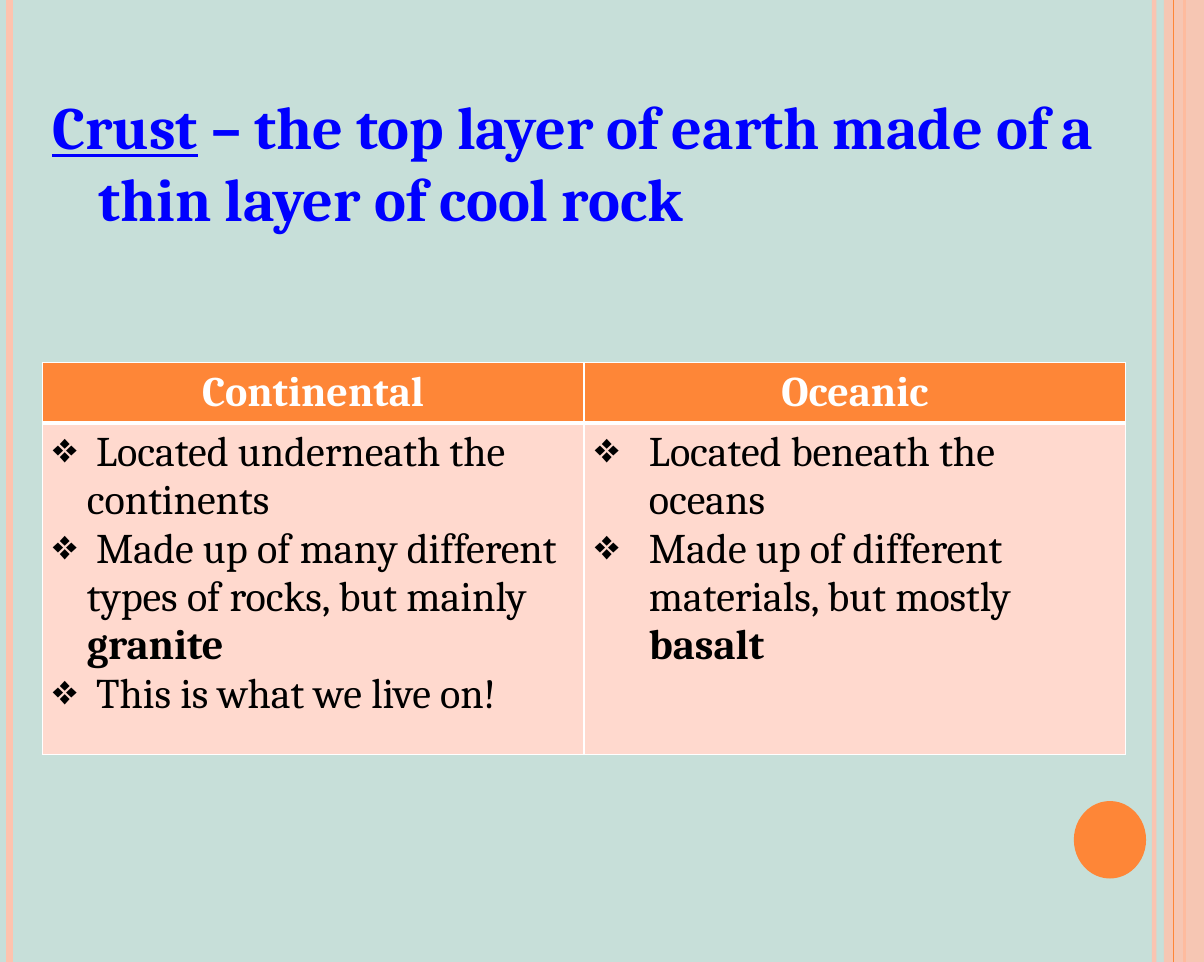
from dataclasses import dataclass

from lxml import etree
from pptx import Presentation
from pptx.dml.color import RGBColor
from pptx.enum.shapes import MSO_CONNECTOR, MSO_SHAPE
from pptx.enum.text import MSO_ANCHOR, MSO_AUTO_SIZE, PP_ALIGN
from pptx.oxml.ns import qn
from pptx.util import Pt

WIDE, HIGH = 800, 639.5
FONT = "Cambria"
HUES = {
    "back": "C7DFD9", "peach": "FEC3AE", "orange": "FE8637", "pale": "FFD9CE",
    "blue": "0000FF", "white": "FFFFFF", "black": "000000",
}


@dataclass
class Stripe:
    x: float
    width: float
    hue: str
    alpha: int = 100


@dataclass
class Block:
    kind: MSO_SHAPE
    box: tuple
    hue: str
    alpha: int = 100


@dataclass
class Run:
    text: str
    bold: bool = False
    under: bool = False


@dataclass
class Column:
    head: str
    indent: float
    items: list


DECOR = [
    Stripe(766.8, 3, "peach", 93),
    Stripe(6.5, 4.5, "peach"),
    Stripe(787, 1.5, "orange"),
    Block(MSO_SHAPE.RECTANGLE, (773.3, 0, 26.7, HIGH), "peach", 87),
    Stripe(779.8, 0.75, "orange"),
    Block(MSO_SHAPE.OVAL, (713.5, 532.5, 48, 51.5), "orange"),
]
TITLE = [
    Run("Crust", True, True),
    Run(" "),
    Run("– the top layer of earth made of a thin layer of cool rock", True),
]
COLUMNS = [
    Column("Continental", 22.5, [
        [Run(" Located underneath the continents")],
        [Run(" Made up of many different types of rocks, but mainly "),
         Run("granite", True)],
        [Run(" This is what we live on!")],
    ]),
    Column("Oceanic", 36, [
        [Run("Located beneath the oceans")],
        [Run("Made up of different materials, but mostly "),
         Run("basalt", True)],
    ]),
]
EDGES = {"lnL": 1, "lnR": 1, "lnT": 1, "lnB": 1}


def tint(fill, hue: str, alpha: int = 100) -> None:
    """Set a solid fill, with optional opacity in percent."""
    fill.solid()
    fill.fore_color.rgb = RGBColor.from_string(HUES[hue])
    if alpha < 100:
        node = fill._xPr.find(qn("a:solidFill"))[0]
        etree.SubElement(node, qn("a:alpha"), val=str(alpha * 1000))


def draw_stripe(slide, part: Stripe) -> None:
    """Draw a full-height vertical line."""
    line = slide.shapes.add_connector(
        MSO_CONNECTOR.STRAIGHT, Pt(part.x), Pt(0), Pt(part.x), Pt(HIGH))
    line.line.width = Pt(part.width)
    tint(line.line.fill, part.hue, part.alpha)
    etree.SubElement(line._element.spPr, qn("a:effectLst"))


def draw_block(slide, part: Block) -> None:
    """Draw a filled shape with no outline."""
    shape = slide.shapes.add_shape(part.kind, *map(Pt, part.box))
    shape.shadow.inherit = False
    shape.line.fill.background()
    tint(shape.fill, part.hue, part.alpha)


def write(para, runs: list, size: float, hue: str) -> None:
    """Add styled runs to a paragraph."""
    for item in runs:
        run = para.add_run()
        run.text = item.text
        font = run.font
        font.name, font.size = FONT, Pt(size)
        font.bold, font.underline = item.bold, item.under
        font.color.rgb = RGBColor.from_string(HUES[hue])


def hang(para, indent: float, mark: str = "") -> None:
    """Give a paragraph a hanging indent and an optional bullet."""
    props = para._p.get_or_add_pPr()
    props.set("marL", str(Pt(indent)))
    props.set("indent", str(-Pt(indent)))
    if mark:
        etree.SubElement(props, qn("a:buChar"), char=mark)


def paint(cell, hue: str, edges: dict) -> None:
    """Set the borders and fill of a cell."""
    props = cell._tc.get_or_add_tcPr()
    for tag, width in edges.items():
        line = etree.SubElement(props, qn(f"a:{tag}"), w=str(Pt(width)))
        fill = etree.SubElement(line, qn("a:solidFill"))
        etree.SubElement(fill, qn("a:srgbClr"), val=HUES["white"])
    tint(cell.fill, hue)


def draw_title(slide) -> None:
    """Fill the title placeholder."""
    title = slide.shapes.title
    title.left, title.top = Pt(26.6), Pt(55.5)
    title.width, title.height = Pt(720), Pt(99.5)
    frame = title.text_frame
    frame.word_wrap, frame.auto_size = True, MSO_AUTO_SIZE.NONE
    frame.vertical_anchor = MSO_ANCHOR.TOP
    frame.margin_left = frame.margin_right = Pt(8)
    frame.margin_top = frame.margin_bottom = Pt(4)
    para = frame.paragraphs[0]
    para.alignment, para.space_before = PP_ALIGN.LEFT, Pt(8)
    hang(para, 31)
    write(para, TITLE, 40, "blue")


def draw_table(slide) -> None:
    """Draw the table that compares both kinds of crust."""
    table = slide.shapes.add_table(
        2, len(COLUMNS), Pt(28), Pt(241.2), Pt(720), Pt(260.5)).table
    table.rows[0].height, table.rows[1].height = Pt(40), Pt(220.5)
    for col, part in enumerate(COLUMNS):
        head, body = table.cell(0, col), table.cell(1, col)
        paint(head, "orange", EDGES | {"lnB": 3})
        paint(body, "pale", EDGES | {"lnT": 3})
        para = head.text_frame.paragraphs[0]
        para.alignment = PP_ALIGN.CENTER
        write(para, [Run(part.head, True)], 28, "white")
        frame = body.text_frame
        for row, runs in enumerate(part.items):
            para = frame.add_paragraph() if row else frame.paragraphs[0]
            hang(para, part.indent, "❖")
            write(para, runs, 28, "black")


def main() -> None:
    """Build the slide and save it."""
    deck = Presentation()
    deck.slide_width, deck.slide_height = Pt(WIDE), Pt(HIGH)
    slide = deck.slides.add_slide(deck.slide_layouts[5])
    tint(slide.background.fill, "back")
    for part in DECOR:
        draw = draw_stripe if isinstance(part, Stripe) else draw_block
        draw(slide, part)
    draw_title(slide)
    draw_table(slide)
    deck.save("out.pptx")


if __name__ == "__main__":
    main()
